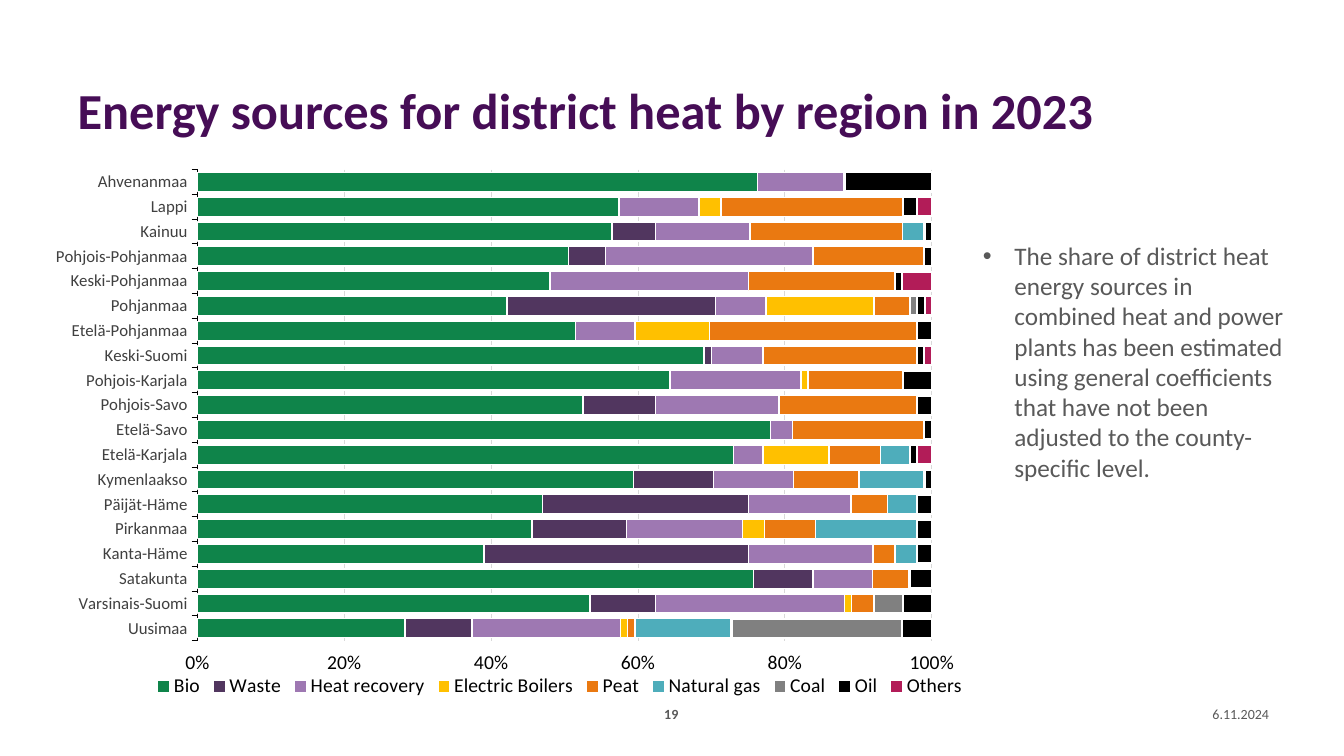
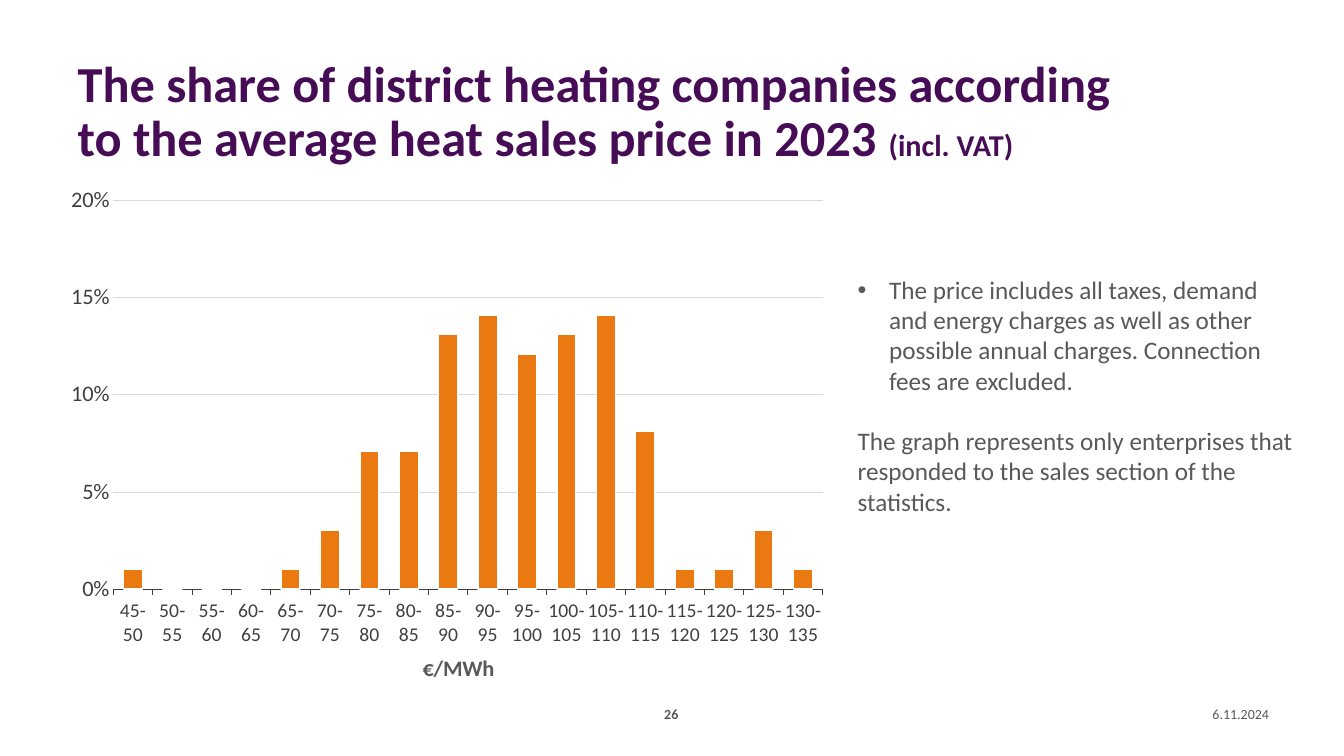
from lxml import etree
from pptx import Presentation
from pptx.chart.data import CategoryChartData
from pptx.dml.color import RGBColor
from pptx.enum.chart import XL_CHART_TYPE, XL_LEGEND_POSITION, XL_TICK_MARK
from pptx.enum.text import MSO_ANCHOR, PP_ALIGN
from pptx.oxml.ns import qn
from pptx.util import Pt

STACKED, COLUMNS = XL_CHART_TYPE.BAR_STACKED_100, XL_CHART_TYPE.COLUMN_CLUSTERED
OUTSIDE, NO_TICKS = XL_TICK_MARK.OUTSIDE, XL_TICK_MARK.NONE
BOTTOM = XL_LEGEND_POSITION.BOTTOM
TOP, MIDDLE = MSO_ANCHOR.TOP, MSO_ANCHOR.MIDDLE
LEFT, CENTER, RIGHT = PP_ALIGN.LEFT, PP_ALIGN.CENTER, PP_ALIGN.RIGHT

FONT = "Calibri"
COLORS = {
    "title": "460D56", "text": "595959", "label": "404040", "grid": "D9D9D9",
    "black": "000000", "white": "FFFFFF", "bio": "0F844A", "waste": "51365F",
    "heat": "9E78B2", "boiler": "FFC000", "peat": "EA7911", "gas": "4EADBB",
    "coal": "808080", "others": "B21C58",
}
DATE = "6.11.2024"
PAGE_NUMBER_BOX = (458, 500.5, 43, 19)
DATE_BOX = (833.5, 500.5, 80, 19)

REGIONS = [
    "Uusimaa", "Varsinais-Suomi", "Satakunta", "Kanta-Häme", "Pirkanmaa",
    "Päijät-Häme", "Kymenlaakso", "Etelä-Karjala", "Etelä-Savo", "Pohjois-Savo",
    "Pohjois-Karjala", "Keski-Suomi", "Etelä-Pohjanmaa", "Pohjanmaa",
    "Keski-Pohjanmaa", "Pohjois-Pohjanmaa", "Kainuu", "Lappi", "Ahvenanmaa",
]
# name, color, line width, percent by region
ENERGY_SOURCES = [
    ("Bio", "bio", 1,
     [28, 54, 75, 39, 46, 47, 60, 73, 78, 53, 65, 69, 51, 43, 48, 50, 57, 58, 77]),
    ("Waste", "waste", 1,
     [9, 9, 8, 36, 13, 28, 11, 0, 0, 10, 0, 1, 0, 29, 0, 5, 6, 0, 0]),
    ("Heat recovery", "heat", 1,
     [20, 26, 8, 17, 16, 14, 11, 4, 3, 17, 18, 7, 8, 7, 27, 28, 13, 11, 12]),
    ("Electric Boilers", "boiler", 1,
     [1, 1, 0, 0, 3, 0, 0, 9, 0, 0, 1, 0, 10, 15, 0, 0, 0, 3, 0]),
    ("Peat", "peat", 1,
     [1, 3, 5, 3, 7, 5, 9, 7, 18, 19, 13, 21, 28, 5, 20, 15, 21, 25, 0]),
    ("Natural gas", "gas", 1,
     [13, 0, 0, 3, 14, 4, 9, 4, 0, 0, 0, 0, 0, 0, 0, 0, 3, 0, 0]),
    ("Coal", "coal", 1.5,
     [23, 4, 0, 0, 0, 0, 0, 0, 0, 0, 0, 0, 0, 1, 0, 0, 0, 0, 0]),
    ("Oil", "black", 1.5,
     [4, 4, 3, 2, 2, 2, 1, 1, 1, 2, 4, 1, 2, 1, 1, 1, 1, 2, 12]),
    ("Others", "others", 1.5,
     [0, 0, 0, 0, 0, 0, 0, 2, 0, 0, 0, 1, 0, 1, 4, 0, 0, 2, 0]),
]
PRICE_BANDS = [f"{low}-{low + 5}" for low in range(45, 135, 5)]
PRICE_SHARES = [("Series 1", "peat", 1,
                 [0.01, 0, 0, 0, 0.01, 0.03, 0.071, 0.071, 0.131, 0.141, 0.121,
                  0.131, 0.141, 0.081, 0.01, 0.01, 0.03, 0.01])]


def rgb(name):
    return RGBColor.from_string(COLORS[name])


def style_font(font, size, color, bold=False):
    font.name, font.size, font.bold = FONT, Pt(size), bold
    font.color.rgb = rgb(color)


def add_span(para, text, size, color="text", bold=False):
    span = para.add_run()
    span.text = text
    style_font(span.font, size, color, bold)


def add_text_box(page, box, anchor=TOP):
    """Add a wrapping text box and return its text frame."""
    frame = page.shapes.add_textbox(*map(Pt, box)).text_frame
    frame.word_wrap = True
    frame.vertical_anchor = anchor
    return frame


def add_title(page, box, spans):
    para = add_text_box(page, box, MIDDLE).paragraphs[0]
    para.line_spacing = 0.9
    for text, size in spans:
        add_span(para, text, size, "title", True)


def add_footer(page, number):
    for box, text, align, bold in ((PAGE_NUMBER_BOX, number, CENTER, True),
                                   (DATE_BOX, DATE, RIGHT, False)):
        para = add_text_box(page, box, MIDDLE).paragraphs[0]
        para.alignment = align
        add_span(para, text, 10, bold=bold)


def add_bullet(para, indent=22.5):
    properties = para._p.get_or_add_pPr()
    properties.set("marL", str(Pt(indent)))
    properties.set("indent", str(Pt(-indent)))
    etree.SubElement(properties, qn("a:buFont")).set("typeface", "Arial")
    etree.SubElement(properties, qn("a:buChar")).set("char", "•")


def add_notes_column(page, box, bullet, remark=None):
    """Place a bulleted remark, then an optional plain one."""
    frame = add_text_box(page, box)
    add_bullet(frame.paragraphs[0])
    add_span(frame.paragraphs[0], bullet, 18)
    if remark:
        para = frame.add_paragraph()
        para.alignment = LEFT
        para.space_before = Pt(21.6)
        add_span(para, remark, 18)


def set_layout(parent, index, inner=False, **fractions):
    """Place a chart part by fractions of the chart's size."""
    layout = parent.find(qn("c:layout"))
    if layout is None:
        layout = etree.Element(qn("c:layout"))
        parent.insert(index, layout)
    manual = etree.SubElement(layout, qn("c:manualLayout"))
    settings = [("layoutTarget", "inner")] if inner else []
    settings += [("xMode", "edge"), ("yMode", "edge"), *fractions.items()]
    for tag, value in settings:
        etree.SubElement(manual, qn(f"c:{tag}")).set("val", str(value))


def style_axis(axis, size, color, tick, line=None):
    axis.major_tick_mark, axis.minor_tick_mark = tick, NO_TICKS
    style_font(axis.tick_labels.font, size, color)
    if line:
        axis.format.line.color.rgb = rgb(line)
        axis.format.line.width = Pt(0.75)
    else:
        axis.format.line.fill.background()


def style_value_axis(axis, size, color, tick, step, grid_width):
    style_axis(axis, size, color, tick)
    axis.tick_labels.number_format = "0%"
    axis.tick_labels.number_format_is_linked = False
    axis.major_unit = step
    axis.has_major_gridlines = True
    grid = axis.major_gridlines.format.line
    grid.color.rgb = rgb("grid")
    grid.width = Pt(grid_width)


def add_bars(page, box, kind, categories, rows, gap, plot_area):
    data = CategoryChartData()
    data.categories = categories
    for name, _, _, values in rows:
        data.add_series(name, values)
    chart = page.shapes.add_chart(kind, *map(Pt, box), data).chart
    chart.has_title = chart.has_legend = False
    style_font(chart.font, 10, "black")
    plot = chart.plots[0]
    plot.gap_width = gap
    plot.vary_by_categories = False
    for series, (_, color, width, _) in zip(plot.series, rows):
        series.invert_if_negative = False
        series.format.fill.solid()
        series.format.fill.fore_color.rgb = rgb(color)
        series.format.line.color.rgb = rgb("white")
        series.format.line.width = Pt(width)
    area = chart.element.find(".//" + qn("c:plotArea"))
    set_layout(area, 0, inner=True, **plot_area)
    return chart


def add_region_chart(page, box):
    chart = add_bars(page, box, STACKED, REGIONS, ENERGY_SOURCES, 30,
                     {"x": 0.17, "y": 0.03, "w": 0.79, "h": 0.83})
    chart.plots[0].overlap = 100
    style_axis(chart.category_axis, 12, "label", OUTSIDE, "black")
    style_value_axis(chart.value_axis, 14, "black", OUTSIDE, 0.2, 0.75)
    chart.has_legend = True
    legend = chart.legend
    legend.position = BOTTOM
    legend.include_in_layout = False
    style_font(legend.font, 14, "black")
    set_layout(legend._element, 1, x=0.12, y=0.91, w=0.88, h=0.06)


def add_price_chart(page, box):
    chart = add_bars(page, box, COLUMNS, PRICE_BANDS, PRICE_SHARES, 106,
                     {"x": 0.06, "y": 0.03, "w": 0.93, "h": 0.78})
    style_axis(chart.category_axis, 14, "label", OUTSIDE, "label")
    style_value_axis(chart.value_axis, 16, "label", NO_TICKS, 0.05, 0.5)
    chart.value_axis.minimum_scale, chart.value_axis.maximum_scale = 0, 0.2
    title = chart.category_axis.axis_title
    add_span(title.text_frame.paragraphs[0], "€/MWh", 16, bold=True)
    set_layout(title._element, 1, x=0.46, y=0.93)


def add_region_page(deck):
    page = deck.slides.add_slide(deck.slide_layouts[6])
    add_title(page, (48.4, 29, 834, 104),
              [("Energy sources for district heat by region in 2023", 36)])
    add_region_chart(page, (28.2, 109, 664, 405.5))
    add_notes_column(
        page, (695, 168, 235.5, 181.5),
        "The share of district heat energy sources in combined heat and power "
        "plants has been estimated using general coefficients that have not "
        "been adjusted to the county-specific level.")
    add_footer(page, "19")


def add_price_page(deck):
    page = deck.slides.add_slide(deck.slide_layouts[6])
    add_title(page, (48.4, 29, 770, 104),
              [("The share of district heating companies according to the "
                "average heat sales price in 2023 ", 36), ("(incl. VAT)", 21.6)])
    add_price_chart(page, (48.2, 132.4, 545, 360))
    add_notes_column(
        page, (605.5, 192.4, 327.5, 181.5),
        "The price includes all taxes, demand and energy charges as well as "
        "other possible annual charges. Connection fees are excluded.",
        "The graph represents only enterprises that responded to the sales "
        "section of the statistics.")
    add_footer(page, "26")


def main():
    deck = Presentation()
    deck.slide_width, deck.slide_height = Pt(960), Pt(540)
    add_region_page(deck)
    add_price_page(deck)
    deck.save("out.pptx")


if __name__ == "__main__":
    main()
